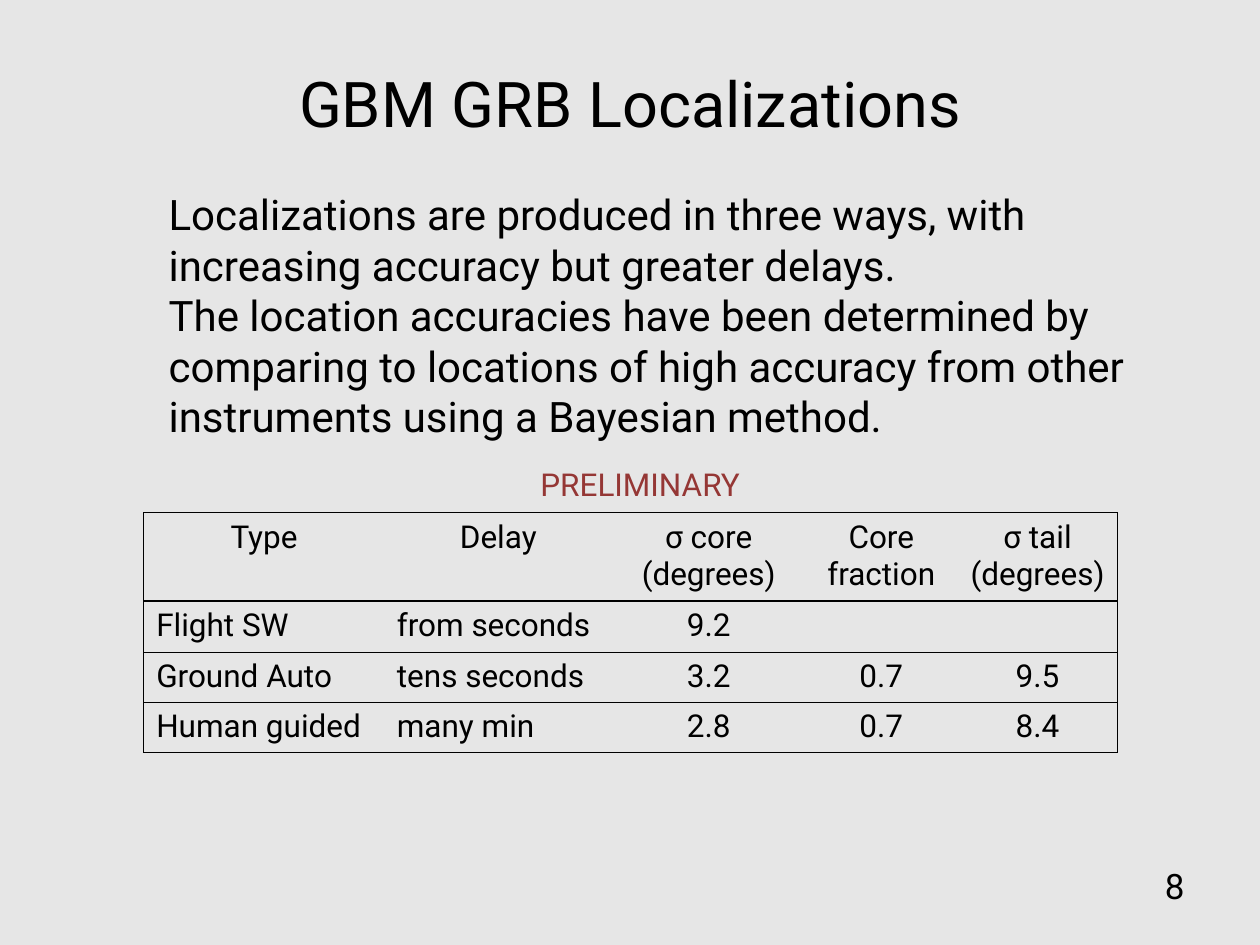
from lxml.etree import SubElement
from pptx import Presentation
from pptx.dml.color import RGBColor
from pptx.enum.text import MSO_ANCHOR, PP_ALIGN
from pptx.oxml.ns import qn
from pptx.util import Inches, Pt

BLACK, RED, GREY = "000000", "953735", "E6E6E6"


def style(tf, size, color=BLACK, align=PP_ALIGN.LEFT):
    for p in tf.paragraphs:
        p.alignment = align
        p.font.size = Pt(size)
        for r in p.runs:
            r.font.size = Pt(size)
            r.font.name = "Roboto"
            r.font.color.rgb = RGBColor.from_string(color)


def border(cell, side, visible):
    ln = SubElement(cell._tc.get_or_add_tcPr(), qn(f"a:ln{side}"), w=str(Pt(0.75)))
    if visible:
        fill = SubElement(ln, qn("a:solidFill"))
        SubElement(fill, qn("a:srgbClr"), val=BLACK)
    else:
        SubElement(ln, qn("a:noFill"))


prs = Presentation()
prs.slide_width, prs.slide_height = Inches(10), Inches(7.5)
s = prs.slides.add_slide(prs.slide_layouts[6])
s.background.fill.solid()
s.background.fill.fore_color.rgb = RGBColor.from_string(GREY)

# Table
columns = [1.91, 1.81, 1.53, 1.21, 1.27]
row_heights = [0.7, 0.4, 0.4, 0.4]
rows = [
    ["Type", "Delay", "σ core\n(degrees)", "Core fraction", "σ tail\n(degrees)"],
    ["Flight SW", "from seconds", "9.2", "", ""],
    ["Ground Auto", "tens seconds", "3.2", "0.7", "9.5"],
    ["Human guided", "many min", "2.8", "0.7", "8.4"],
]
table = s.shapes.add_table(len(rows), len(columns), Inches(1.14), Inches(4.07),
                           Inches(sum(columns)), Inches(sum(row_heights))).table
table.first_row = table.horz_banding = False
for column, width in zip(table.columns, columns):
    column.width = Inches(width)
for i, (row, height) in enumerate(zip(rows, row_heights)):
    table.rows[i].height = Inches(height)
    for j, text in enumerate(row):
        cell = table.cell(i, j)
        cell.text_frame.text = text
        centred = i == 0 or j > 1
        style(cell.text_frame, 18, align=PP_ALIGN.CENTER if centred else PP_ALIGN.LEFT)
        # Outer frame and row rules only
        border(cell, "L", j == 0)
        border(cell, "R", j == len(columns) - 1)
        border(cell, "T", True)
        border(cell, "B", True)
        cell.fill.background()

# Title, slide number, body and table caption
body = ("Localizations are produced in three ways, with increasing accuracy "
        "but greater delays.\n"
        "The location accuracies have been determined by comparing to locations "
        "of high accuracy from other instruments using a Bayesian method.")
texts = [
    ("GBM GRB Localizations", 0.5, 0.19, 9, 1.25, 36, BLACK, PP_ALIGN.CENTER, MSO_ANCHOR.MIDDLE),
    ("8", 7.17, 6.7, 2.33, 0.65, 20, BLACK, PP_ALIGN.RIGHT, MSO_ANCHOR.MIDDLE),
    (body, 1.24, 1.45, 7.83, 2.12, 24, BLACK, PP_ALIGN.LEFT, MSO_ANCHOR.TOP),
    ("PRELIMINARY", 4.19, 3.64, 2.82, 0.71, 18, RED, PP_ALIGN.LEFT, MSO_ANCHOR.TOP),
]
for text, left, top, width, height, size, color, align, anchor in texts:
    sp = s.shapes.add_textbox(Inches(left), Inches(top), Inches(width), Inches(height))
    tf = sp.text_frame
    tf.word_wrap = True
    tf.vertical_anchor = anchor
    tf.text = text
    style(tf, size, color, align)

prs.save("out.pptx")
